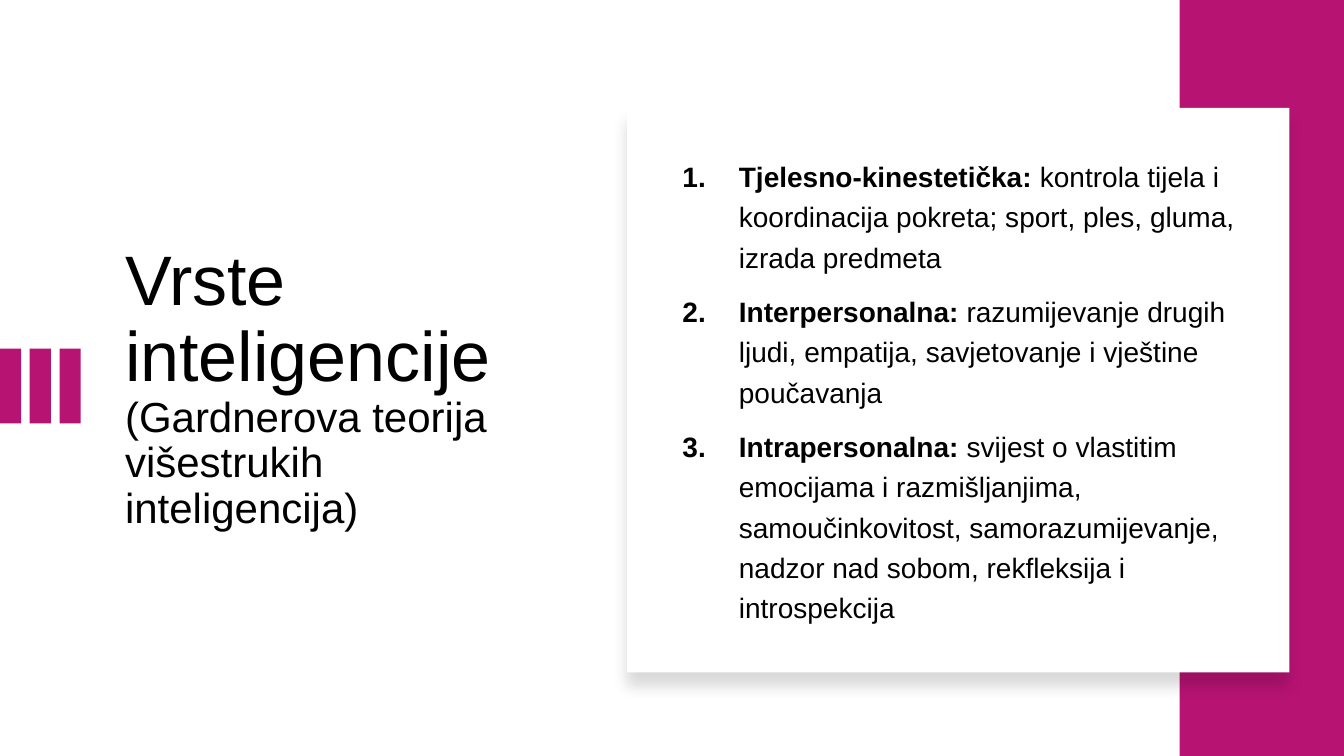
import pptx
import pptx.util
import pptx.dml.color
import pptx.enum.shapes
import pptx.enum.text
import pptx.oxml
import pptx.oxml.ns
from pptx.util import Inches

MAGENTA = pptx.dml.color.RGBColor(0xB7, 0x13, 0x73)
WHITE = pptx.dml.color.RGBColor(0xFF, 0xFF, 0xFF)
BLACK = pptx.dml.color.RGBColor(0x00, 0x00, 0x00)

CARD_SHADOW = (
    f'<a:effectLst {pptx.oxml.ns.nsdecls("a")}>'
    '<a:outerShdw blurRad="139700" dist="127000" dir="5400000" algn="t" rotWithShape="0">'
    '<a:srgbClr val="000000"><a:alpha val="15000"/></a:srgbClr>'
    '</a:outerShdw></a:effectLst>'
)

TYPES = [
    ("Tjelesno-kinestetička: ",
     "kontrola tijela i koordinacija pokreta; sport, ples, gluma, izrada predmeta"),
    ("Interpersonalna: ",
     "razumijevanje drugih ljudi, empatija, savjetovanje i vještine poučavanja"),
    ("Intrapersonalna: ",
     "svijest o vlastitim emocijama i razmišljanjima, samoučinkovitost, "
     "samorazumijevanje, nadzor nad sobom, rekfleksija i introspekcija"),
]


class SlideBuilder:
    font_name = "Arial"

    def __init__(self, slide):
        self.slide = slide

    def style(self, font, size):
        font.name = self.font_name
        font.size = pptx.util.Pt(size)
        font.color.rgb = BLACK

    def frame(self, shape):
        text_frame = shape.text_frame
        text_frame.word_wrap = True
        text_frame.auto_size = pptx.enum.text.MSO_AUTO_SIZE.NONE
        text_frame.vertical_anchor = pptx.enum.text.MSO_ANCHOR.MIDDLE
        return text_frame

    def title(self, left, top, width, height, heading, subheading):
        shape = self.slide.shapes.title
        shape.left, shape.top, shape.width, shape.height = left, top, width, height
        paragraph = self.frame(shape).paragraphs[0]
        paragraph.alignment = pptx.enum.text.PP_ALIGN.LEFT
        paragraph.line_spacing = 0.9
        heading_run = paragraph.add_run()
        heading_run.text = heading
        self.style(heading_run.font, 50)
        paragraph.add_line_break()
        subheading_run = paragraph.add_run()
        subheading_run.text = subheading
        self.style(subheading_run.font, 30)

    def rectangle(self, left, top, width, height, color):
        shape = self.slide.shapes.add_shape(
            pptx.enum.shapes.MSO_SHAPE.RECTANGLE, left, top, width, height)
        shape.shadow.inherit = False
        shape.fill.solid()
        shape.fill.fore_color.rgb = color
        shape.line.fill.background()
        return shape

    def card(self, left, top, width, height):
        properties = self.rectangle(left, top, width, height, WHITE)._element.spPr
        empty_effects = properties.find(pptx.oxml.ns.qn("a:effectLst"))
        properties.replace(empty_effects, pptx.oxml.parse_xml(CARD_SHADOW))

    def numbered_list(self, left, top, width, height, items):
        text_frame = self.frame(self.slide.shapes.add_textbox(left, top, width, height))
        for index, (term, description) in enumerate(items):
            paragraph = text_frame.add_paragraph() if index else text_frame.paragraphs[0]
            properties = paragraph._p.get_or_add_pPr()
            properties.set("marL", str(Inches(0.56)))
            properties.set("indent", str(-Inches(0.56)))
            properties.append(pptx.oxml.parse_xml(
                f'<a:buAutoNum {pptx.oxml.ns.nsdecls("a")} type="arabicPeriod"/>'))
            paragraph.line_spacing = 1.2
            if index:
                paragraph.space_before = pptx.util.Pt(10)
            self.style(paragraph.font, 20)
            for text, bold in ((term, True), (description, False)):
                run = paragraph.add_run()
                run.text = text
                run.font.bold = bold


def main():
    presentation = pptx.Presentation()
    presentation.slide_width = Inches(13.33)
    presentation.slide_height = Inches(7.5)
    slide = presentation.slides.add_slide(presentation.slide_layouts[5])
    builder = SlideBuilder(slide)

    # Title
    builder.title(Inches(1.14), Inches(1.46), Inches(4.26), Inches(4.79),
                  "Vrste inteligencije", "(Gardnerova teorija višestrukih inteligencija)")

    # Accent bars at the left edge
    for bar in range(3):
        builder.rectangle(Inches(0.295 * bar), Inches(3.46), Inches(0.21), Inches(0.74), MAGENTA)

    # Side band and card
    builder.rectangle(Inches(11.7), 0, Inches(1.63), Inches(7.5), MAGENTA)
    builder.card(Inches(6.22), Inches(1.07), Inches(6.57), Inches(5.6))

    # Types of intelligence
    builder.numbered_list(Inches(6.67), Inches(1.46), Inches(5.75), Inches(4.79), TYPES)

    presentation.save("out.pptx")


if __name__ == "__main__":
    main()
